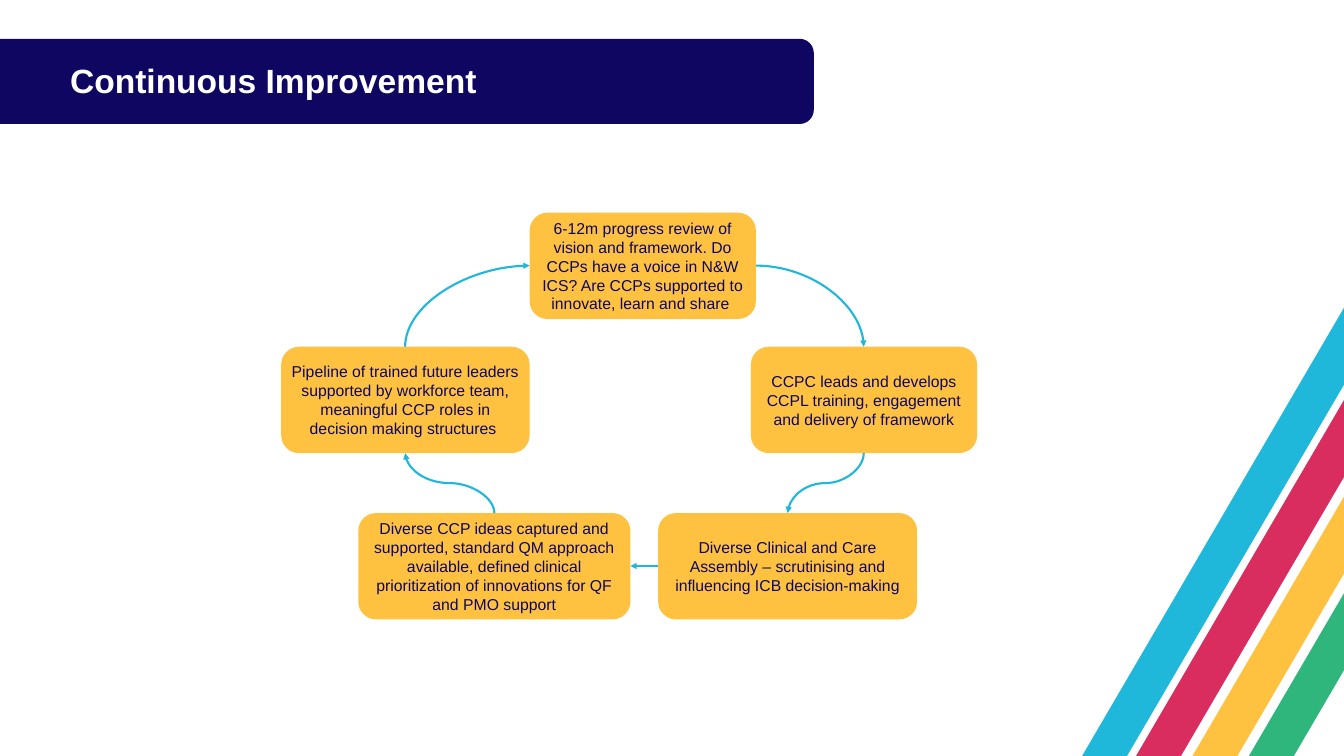
"""Build the Continuous Improvement cycle slide."""
from lxml import etree
from pptx import Presentation
from pptx import util as u
from pptx.dml.color import RGBColor
from pptx.enum import shapes, text
from pptx.oxml.ns import qn

PX = 9144
THEME = {
    "font": "Arial", "title": 48, "body": 22.5, "line": 3,
    "navy": "0E0661", "white": "FFFFFF", "blue": "1FB8DB",
    "pink": "D92D5F", "yellow": "FFC240", "green": "2EB67D",
}


def add_text(sp, words, size, color, bold=False, align=text.PP_ALIGN.CENTER, inset=10, spacing=1.0):
    tf = sp.text_frame
    tf.word_wrap = True
    tf.vertical_anchor = text.MSO_ANCHOR.MIDDLE
    tf.margin_left = tf.margin_right = inset * PX
    tf.margin_top = tf.margin_bottom = min(inset, 5) * PX
    p = tf.paragraphs[0]
    p.alignment = align
    p.line_spacing = spacing
    r = p.add_run()
    r.text = words
    r.font.name = THEME["font"]
    r.font.size = u.Pt(THEME[size])
    r.font.bold = bold
    r.font.color.rgb = RGBColor.from_string(THEME[color])


def add_box(s, x, y, w, h, color):
    sp = s.shapes.add_shape(shapes.MSO_SHAPE.ROUNDED_RECTANGLE, x * PX, y * PX, w * PX, h * PX)
    sp.shadow.inherit = False
    sp.fill.solid()
    sp.fill.fore_color.rgb = RGBColor.from_string(THEME[color])
    sp.line.fill.background()
    return sp


prs = Presentation()
prs.slide_width, prs.slide_height = 2667 * PX, 1500 * PX
s = prs.slides.add_slide(prs.slide_layouts[6])

add_box(s, -59, 77, 1674, 169, "navy")
for x, color in ((2367, "blue"), (2474, "pink"), (2586, "yellow"), (2698, "green")):
    stripe = add_box(s, x, 325, 77, 1619, color)
    stripe.adjustments[0] = 0.5
    stripe.rotation = 30.3

title = s.shapes.add_textbox(133 * PX, 107 * PX, 1218 * PX, 113 * PX)
add_text(title, "Continuous Improvement", "title", "white", bold=True,
         align=text.PP_ALIGN.LEFT, inset=6, spacing=0.9)

STEP_H = 211
TOP, MIDDLE, BOTTOM = 422, 688, 1018
steps = (
    (1051, TOP, 449, "6-12m progress review of vision and framework. Do CCPs have a voice in N&W ICS? "
                     "Are CCPs supported to innovate, learn and share "),
    (1490, MIDDLE, 449, "CCPC leads and develops CCPL training, engagement and delivery of framework"),
    (1306, BOTTOM, 514, "Diverse Clinical and Care Assembly – scrutinising and influencing ICB decision-making"),
    (711, BOTTOM, 540, "Diverse CCP ideas captured and supported, standard QM approach available, "
                       "defined clinical prioritization of innovations for QF and PMO support"),
    (558, MIDDLE, 493, "Pipeline of trained future leaders supported by workforce team, "
                       "meaningful CCP roles in decision making structures "),
)
sides = []
for x, y, w, words in steps:
    add_text(add_box(s, x, y, w, STEP_H, "yellow"), words, "body", "navy")
    cx, cy = x + w // 2, y + STEP_H // 2
    sides.append({"left": (x, cy), "right": (x + w, cy), "top": (cx, y), "bottom": (cx, y + STEP_H)})

review, training, assembly, ideas, pipeline = sides
arrows = (
    (review["right"], training["top"], "curvedConnector2", 0),
    (training["bottom"], assembly["top"], "curvedConnector3", 90),
    (assembly["left"], ideas["right"], "line", 0),
    (ideas["top"], pipeline["bottom"], "curvedConnector3", 270),
    (pipeline["top"], review["left"], "curvedConnector2", 90),
)
for (x1, y1), (x2, y2), preset, turn in arrows:
    dx, dy = x2 - x1, y2 - y1
    a, b = {0: (dx, dy), 90: (dy, -dx), 270: (-dy, dx)}[turn]
    left, top = (x1 + x2 - a) / 2, (y1 + y2 - b) / 2
    ends = [round(v * PX) for v in (left, top, left + a, top + b)]
    cxn = s.shapes.add_connector(shapes.MSO_CONNECTOR.CURVE, *ends)
    cxn.line.color.rgb = RGBColor.from_string(THEME["blue"])
    cxn.line.width = u.Pt(THEME["line"])
    sp_pr = cxn._element.spPr
    sp_pr.find(qn("a:prstGeom")).set("prst", preset)
    if turn:
        sp_pr.find(qn("a:xfrm")).set("rot", str(turn * 60000))
    etree.SubElement(sp_pr.find(qn("a:ln")), qn("a:tailEnd"), type="triangle")
    etree.SubElement(sp_pr, qn("a:effectLst"))

prs.save("out.pptx")
